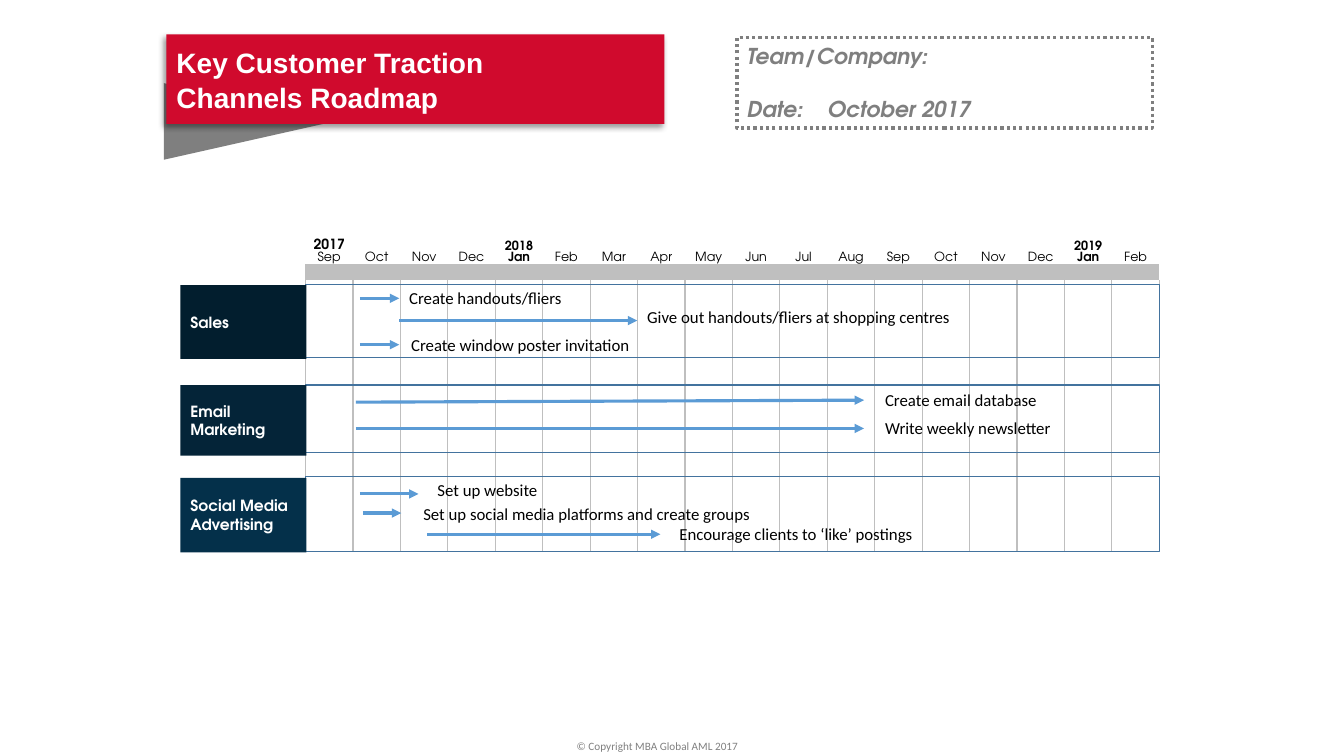
from dataclasses import dataclass

from lxml.etree import SubElement
from pptx import Presentation
from pptx.dml.color import RGBColor
from pptx.enum.dml import MSO_LINE
from pptx.enum.shapes import MSO_CONNECTOR, MSO_SHAPE as SHAPE
from pptx.enum.text import MSO_ANCHOR as ANCHOR, MSO_AUTO_SIZE, PP_ALIGN as ALIGN
from pptx.oxml.ns import qn
from pptx.util import Inches, Pt


@dataclass(frozen=True)
class Theme:
    """Colours, fonts and type sizes of the roadmap."""
    red: str = "D00A2D"
    white: str = "FFFFFF"
    black: str = "000000"
    gray: str = "7F7F7F"
    footer_gray: str = "808080"
    grid: str = "BFBFBF"
    frame: str = "43739E"
    arrow: str = "5B9BD5"
    heading: str = "Arial"
    display: str = "TeX Gyre Adventor"
    body: str = "Calibri"
    title_size: float = 20
    team_size: float = 15.6
    task_size: float = 12
    lane_size: float = 11
    year_size: float = 10
    month_size: float = 9
    footer_size: float = 8


@dataclass(frozen=True)
class Box:
    """A rectangle in inches."""
    left: float
    top: float
    width: float
    height: float

    def lengths(self):
        """Return left, top, width and height as lengths."""
        return [Inches(side) for side in (self.left, self.top, self.width, self.height)]


@dataclass(frozen=True)
class Task:
    """An arrow and its caption, in inches from the lane's top left corner."""
    text: str
    start: float
    end: float
    level: float
    text_left: float
    text_top: float
    text_width: float
    rise: float = 0


@dataclass(frozen=True)
class Lane:
    """A channel with its label, frame and tasks."""
    name: str
    color: str
    label: Box
    frame: Box
    tasks: tuple


THEME = Theme()
GRID = Box(3.03, 2.28, 8.47, 3.19)
ROW_HEIGHTS = (0.34, 0.16, 2.69)
MONTHS = ("2017\nSep", "Oct", "Nov", "Dec", "2018 Jan", "Feb", "Mar", "Apr", "May",
          "Jun", "Jul", "Aug", "Sep", "Oct", "Nov", "Dec", "2019 Jan", "Feb")
LANES = (
    Lane("Sales", "021E2E", Box(1.79, 2.83, 1.25, 0.73), Box(3.03, 2.82, 8.47, 0.73), (
        Task("Create handouts/fliers", 0.54, 0.93, 0.14, 0.93, -0.01, 1.8),
        Task("Give out handouts/fliers at shopping centres", 0.93, 3.29, 0.36, 3.29, 0.17, 3.3),
        Task("Create window poster invitation", 0.54, 0.93, 0.6, 0.95, 0.45, 2.45))),
    Lane("Email\nMarketing", "042438", Box(1.79, 3.82, 1.25, 0.7), Box(3.03, 3.82, 8.47, 0.67), (
        Task("Create email database", 0.5, 5.54, 0.17, 5.65, 0, 1.84, 0.02),
        Task("Write weekly newsletter", 0.5, 5.54, 0.43, 5.65, 0.28, 2.31))),
    Lane("Social Media\nAdvertising", "04304A", Box(1.79, 4.74, 1.25, 0.74),
         Box(3.03, 4.73, 8.47, 0.74), (
        Task("Set up website", 0.54, 1.12, 0.17, 1.21, -0.02, 2.31),
        Task("Set up social media platforms and create groups", 0.57, 0.95, 0.36, 1.07, 0.22, 3.9),
        Task("Encourage clients to ‘like’ postings", 1.21, 3.52, 0.57, 3.61, 0.42, 2.72))),
)


def assign(target, values):
    """Set each named attribute of the target."""
    for name, value in values.items():
        setattr(target, name, value)


def write(frame, text, color, align=ALIGN.LEFT, **font):
    """Fill a text frame with one formatted paragraph per line."""
    for index, line in enumerate(text.split("\n")):
        para = frame.add_paragraph() if index else frame.paragraphs[0]
        para.alignment = align
        span = para.add_run()
        span.text = line
        assign(span.font, font)
        span.font.color.rgb = RGBColor.from_string(color)


def add_rectangle(page, box, fill=None, line=None, width=1, kind=SHAPE.RECTANGLE):
    """Add a flat shape with an optional fill and outline."""
    shape = page.shapes.add_shape(kind, *box.lengths())
    shape.shadow.inherit = False
    if fill:
        shape.fill.solid()
        shape.fill.fore_color.rgb = RGBColor.from_string(fill)
    else:
        shape.fill.background()
    if line:
        shape.line.color.rgb = RGBColor.from_string(line)
        shape.line.width = Pt(width)
    else:
        shape.line.fill.background()
    return shape


def add_caption(page, box, text, color, size):
    """Add a plain text box."""
    frame = page.shapes.add_textbox(*box.lengths()).text_frame
    frame.word_wrap = True
    write(frame, text, color, name=THEME.body, size=Pt(size))


def add_heading(page, box):
    """Place the title banner over its folded gray flag."""
    flag_box = Box(box.left + 0.44, box.top + 0.02, 0.76, 1.69)
    flag = add_rectangle(page, flag_box, THEME.gray, kind=SHAPE.FLOWCHART_EXTRACT)
    flag.rotation = 90
    title = page.shapes.title
    page.shapes._spTree.append(title._element)
    assign(title, dict(zip(("left", "top", "width", "height"), box.lengths())))
    title.fill.solid()
    title.fill.fore_color.rgb = RGBColor.from_string(THEME.red)
    effects = SubElement(title._element.spPr, qn("a:effectLst"))
    shadow = SubElement(effects, qn("a:outerShdw"), blurRad=str(Pt(4)), dist=str(Pt(3)),
                        dir="8100000", algn="tr", rotWithShape="0")
    color = SubElement(shadow, qn("a:srgbClr"), val=THEME.black)
    SubElement(color, qn("a:alpha"), val="40000")
    frame = title.text_frame
    assign(frame, {"auto_size": MSO_AUTO_SIZE.NONE, "word_wrap": True,
                   "vertical_anchor": ANCHOR.MIDDLE})
    write(frame, "Key Customer Traction\nChannels Roadmap", THEME.white,
          name=THEME.heading, size=Pt(THEME.title_size), bold=True)
    for para in frame.paragraphs:
        para.line_spacing = 1.05


def add_team_box(page, box):
    """Place the dotted box for team and date."""
    shape = add_rectangle(page, box, line=THEME.gray, width=2.25)
    shape.line.dash_style = MSO_LINE.ROUND_DOT
    frame = shape.text_frame
    assign(frame, {"word_wrap": True, "vertical_anchor": ANCHOR.MIDDLE})
    write(frame, "Team/Company:\nDate:\tOctober 2017", THEME.gray, name=THEME.display,
          size=Pt(THEME.team_size), bold=True, italic=True)
    date = frame.paragraphs[1]
    date.space_before = Pt(19)
    tabs = SubElement(date._p.get_or_add_pPr(), qn("a:tabLst"))
    SubElement(tabs, qn("a:tab"), pos=str(Inches(0.8)), algn="l")


def add_month_grid(page, box):
    """Place the month header, gray bar and column lines as a table."""
    graphic = page.shapes.add_table(len(ROW_HEIGHTS), len(MONTHS), *box.lengths())
    table = graphic.table
    assign(table, {"first_row": False, "horz_banding": False})
    style = table._tbl.tblPr.find(qn("a:tableStyleId"))
    style.text = "{2D5ABB26-0587-4C30-8999-92F81FD0307C}"
    for row, height in zip(table.rows, ROW_HEIGHTS):
        row.height = Inches(height)
    for column, month in enumerate(MONTHS):
        table.columns[column].width = Inches(box.width / len(MONTHS))
        header, bar, body = (table.cell(row, column) for row in range(len(ROW_HEIGHTS)))
        for cell in (header, bar, body):
            assign(cell, {"margin_left": 0, "margin_right": 0, "margin_top": 0,
                          "margin_bottom": 0, "vertical_anchor": ANCHOR.BOTTOM})
        write(header.text_frame, month, THEME.black, ALIGN.CENTER, name=THEME.display,
              size=Pt(THEME.month_size), bold=month.startswith("20"))
        for cell in (bar, body):
            SubElement(cell.text_frame.paragraphs[0]._p, qn("a:endParaRPr"), sz="800")
        for side in ("a:lnL", "a:lnR"):
            edge = SubElement(body._tc.get_or_add_tcPr(), qn(side), w=str(Pt(1)))
            paint = SubElement(edge, qn("a:solidFill"))
            SubElement(paint, qn("a:srgbClr"), val=THEME.grid)
        header.fill.background()
        body.fill.background()
        bar.fill.solid()
        bar.fill.fore_color.rgb = RGBColor.from_string(THEME.grid)
    year, month = (para.runs[0].font for para in table.cell(0, 0).text_frame.paragraphs)
    year.size = Pt(THEME.year_size)
    month.bold = False


def add_task(page, box, task):
    """Place a task's arrow and caption within its lane."""
    level = box.top + task.level
    ends = (box.left + task.start, level, box.left + task.end, level - task.rise)
    arrow = page.shapes.add_connector(MSO_CONNECTOR.STRAIGHT, *(Inches(end) for end in ends))
    arrow.line.color.rgb = RGBColor.from_string(THEME.arrow)
    arrow.line.width = Pt(2.25)
    properties = arrow._element.spPr
    SubElement(properties.find(qn("a:ln")), qn("a:tailEnd"), type="triangle")
    SubElement(properties, qn("a:effectLst"))
    caption = Box(box.left + task.text_left, box.top + task.text_top, task.text_width, 0.3)
    add_caption(page, caption, task.text, THEME.black, THEME.task_size)


def add_lane(page, lane):
    """Place a channel's frame, label and tasks."""
    add_rectangle(page, lane.frame, line=THEME.frame)
    frame = add_rectangle(page, lane.label, lane.color).text_frame
    assign(frame, {"word_wrap": True, "vertical_anchor": ANCHOR.MIDDLE})
    write(frame, lane.name, THEME.white, name=THEME.display,
          size=Pt(THEME.lane_size), bold=True)
    for task in lane.tasks:
        add_task(page, lane.frame, task)


def main():
    """Build the roadmap slide and save it."""
    deck = Presentation()
    assign(deck, {"slide_width": Inches(13.33), "slide_height": Inches(7.5)})
    page = deck.slides.add_slide(deck.slide_layouts[5])
    add_month_grid(page, GRID)
    for lane in LANES:
        add_lane(page, lane)
    add_heading(page, Box(1.65, 0.34, 4.94, 0.89))
    add_team_box(page, Box(7.31, 0.37, 4.12, 0.9))
    add_caption(page, Box(5.62, 7.29, 2.1, 0.24), "© Copyright MBA Global AML 2017",
                THEME.footer_gray, THEME.footer_size)
    deck.save("out.pptx")


if __name__ == "__main__":
    main()
